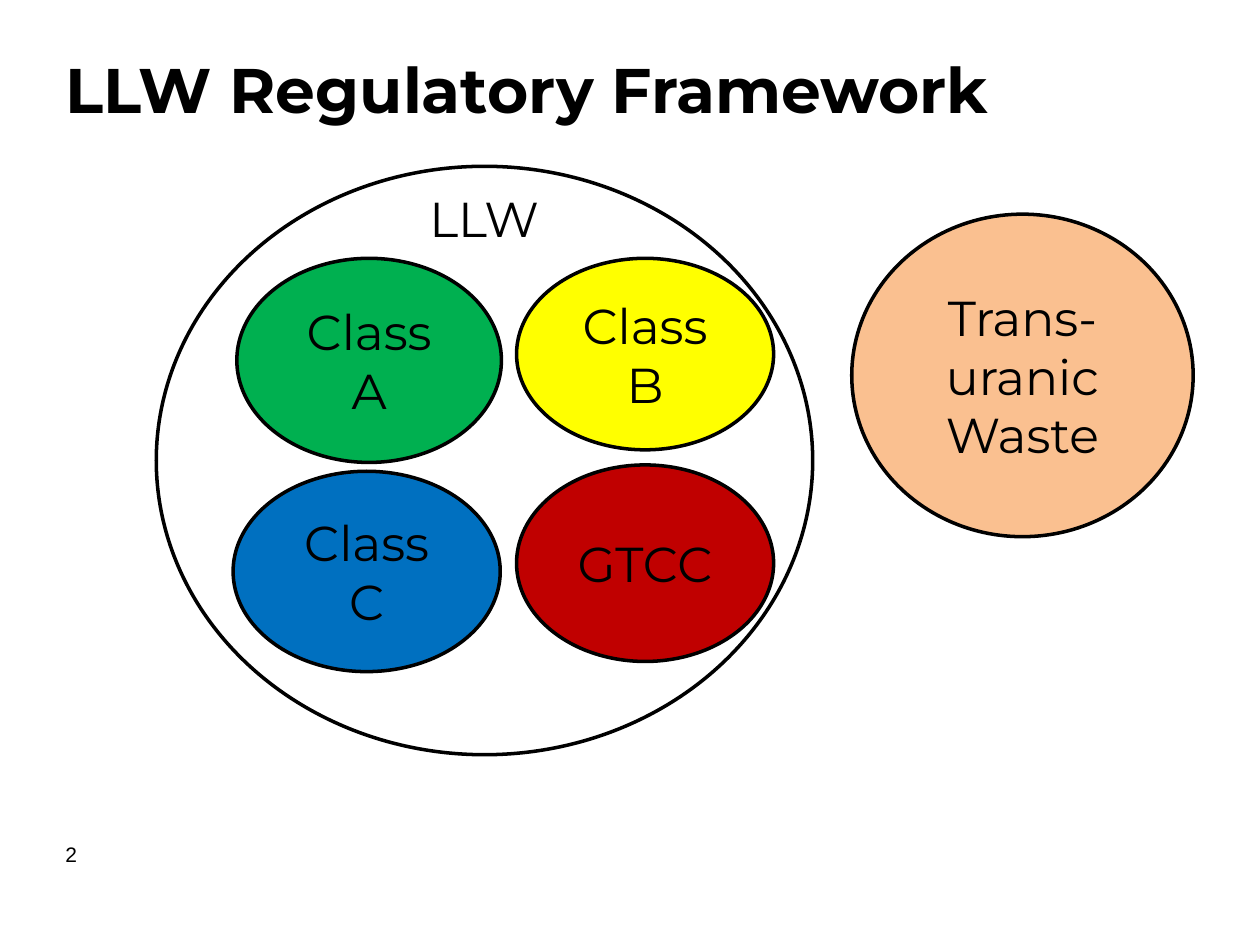
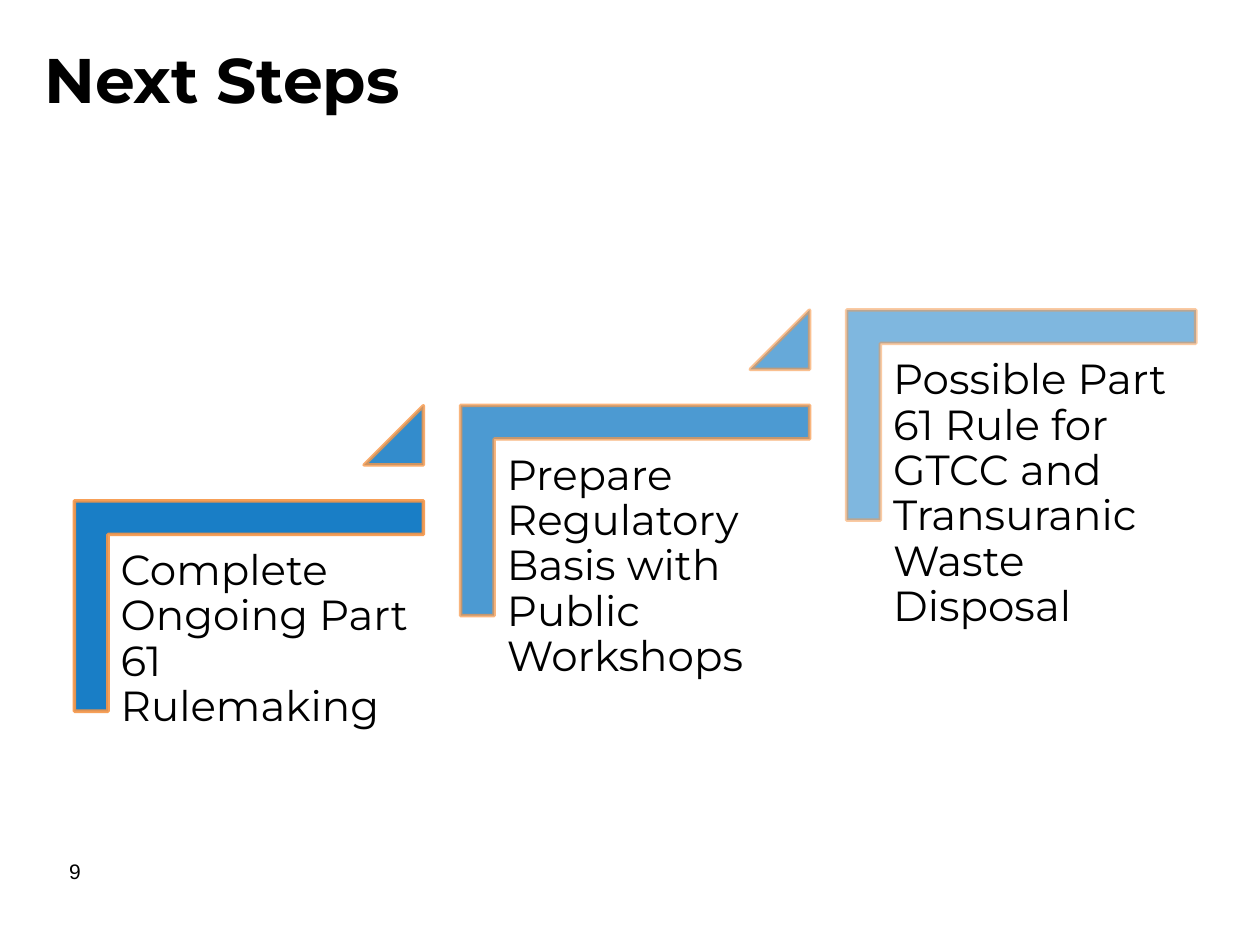
import dataclasses

import lxml.etree
import pptx
import pptx.dml.color
import pptx.enum.shapes
import pptx.enum.text
import pptx.oxml.ns
import pptx.util

RGBColor = pptx.dml.color.RGBColor
ShapeKind = pptx.enum.shapes.MSO_SHAPE
Align = pptx.enum.text.PP_ALIGN
Anchor = pptx.enum.text.MSO_ANCHOR

BLACK = RGBColor(0x00, 0x00, 0x00)
WHITE = RGBColor(0xFF, 0xFF, 0xFF)
GREEN = RGBColor(0x00, 0xB0, 0x50)
YELLOW = RGBColor(0xFF, 0xFF, 0x00)
BLUE = RGBColor(0x00, 0x70, 0xC0)
RED = RGBColor(0xC0, 0x00, 0x00)
PEACH = RGBColor(0xFA, 0xC0, 0x90)
ORANGE = RGBColor(0xF7, 0x96, 0x46)

HEADING_FONT = "Montserrat"
NUMBER_FONT = "Arial"
SLIDE_WIDTH = pptx.util.Inches(10)
SLIDE_HEIGHT = pptx.util.Inches(7.5)
COLUMNS, ROWS = 100, 75
TITLE_ONLY_LAYOUT = 5


@dataclasses.dataclass
class Box:
    left: float
    top: float
    width: float
    height: float

    def inner(self, left, top, width, height):
        return Box(self.left + left, self.top + top, width, height)

    def lengths(self):
        column, row = SLIDE_WIDTH / COLUMNS, SLIDE_HEIGHT / ROWS
        return (round(self.left * column), round(self.top * row),
                round(self.width * column), round(self.height * row))


def write(shape, text, size, font=HEADING_FONT, align=Align.LEFT,
          anchor=Anchor.MIDDLE, bold=False):
    frame = shape.text_frame
    frame.word_wrap = True
    frame.vertical_anchor = anchor
    frame.text = text
    paragraph = frame.paragraphs[0]
    paragraph.alignment = align
    paragraph.font.name = font
    paragraph.font.size = pptx.util.Pt(size)
    paragraph.font.bold = bold
    paragraph.font.color.rgb = BLACK
    return paragraph


def add_text(slide, box, text, size, **style):
    shape = slide.shapes.add_textbox(*box.lengths())
    return shape, write(shape, text, size, **style)


def add_outlined(slide, kind, box, fill, line):
    shape = slide.shapes.add_shape(kind, *box.lengths())
    shape.shadow.inherit = False
    shape.fill.solid()
    shape.fill.fore_color.rgb = fill
    shape.line.color.rgb = line
    shape.line.width = pptx.util.Pt(2)
    return shape


def set_opacity(shape, percent):
    for color in shape._element.spPr.iter(pptx.oxml.ns.qn("a:srgbClr")):
        alpha = lxml.etree.SubElement(color, pptx.oxml.ns.qn("a:alpha"))
        alpha.set("val", str(percent * 1000))


def add_titled_slide(presentation, title, title_box, number, number_box, number_align):
    slide = presentation.slides.add_slide(presentation.slide_layouts[TITLE_ONLY_LAYOUT])
    heading = slide.shapes.title
    heading.left, heading.top, heading.width, heading.height = title_box.lengths()
    write(heading, title, 36, bold=True)
    add_text(slide, number_box, number, 12, font=NUMBER_FONT, align=number_align)
    return slide


def add_waste_class(slide, box, text, fill):
    ellipse = add_outlined(slide, ShapeKind.OVAL, box, fill, BLACK)
    write(ellipse, text, 28, align=Align.CENTER)


def add_low_level_waste(slide, box):
    add_outlined(slide, ShapeKind.OVAL, box, WHITE, BLACK)
    classes = [
        ("Class B", YELLOW, (28.6, 7.3, 20.4, 15.2)),
        ("Class A", GREEN, (6.4, 7.3, 21, 16.2)),
        ("Class C", BLUE, (6.1, 24.2, 21.2, 15.9)),
        ("GTCC", RED, (28.6, 23.7, 20.4, 15.6)),
    ]
    for text, fill, place in classes:
        add_waste_class(slide, box.inner(*place), text, fill)
    add_text(slide, box.inner(20.7, 1.3, 15.2, 5.7), "LLW", 28, anchor=Anchor.TOP)


def add_step(slide, box, text, opacity, has_next):
    turn = (box.width - box.height) / 2
    upright = box.inner(turn, -turn, box.height, box.width)
    bracket = add_outlined(slide, ShapeKind.CORNER, upright, BLUE, ORANGE)
    bracket.rotation = 90
    bracket.adjustments[0] = bracket.adjustments[1] = 0.16
    set_opacity(bracket, opacity)

    label, paragraph = add_text(slide, box.inner(2.7, 2.85, 25, 21.9), text, 24,
                                anchor=Anchor.TOP)
    paragraph.line_spacing = 0.9
    frame = label.text_frame
    frame.margin_left = frame.margin_right = pptx.util.Inches(0.1)
    frame.margin_top = frame.margin_bottom = pptx.util.Inches(0.1)

    if has_next:
        rise = add_outlined(slide, ShapeKind.ISOSCELES_TRIANGLE,
                            box.inner(23, -7.55, 4.7, 4.7), BLUE, ORANGE)
        rise.adjustments[0] = 1
        set_opacity(rise, opacity - 10)


def add_staircase(slide, box, steps):
    for index, text in enumerate(steps):
        step_box = box.inner(30.65 * index, box.height - 16.7 - 7.58 * index, 27.7, 16.7)
        add_step(slide, step_box, text, 90 - 20 * index, index < len(steps) - 1)


def add_framework_slide(presentation):
    slide = add_titled_slide(presentation, "LLW Regulatory Framework",
                             Box(4.2, 1.7, 80, 10.6),
                             "2", Box(4.2, 65.8, 23.3, 4), Align.LEFT)
    add_low_level_waste(slide, Box(12.4, 13.2, 52.1, 46.7))
    add_waste_class(slide, Box(67.6, 17, 27.1, 25.6), "Trans-uranic Waste", PEACH)


def add_next_steps_slide(presentation):
    slide = add_titled_slide(presentation, "Next Steps", Box(2.5, 0, 89.2, 12.5),
                             "9", Box(0.3, 67.5, 7.1, 3.3), Align.RIGHT)
    add_staircase(slide, Box(5.9, 24.6, 89, 31.85), [
        "Complete Ongoing Part 61 Rulemaking",
        "Prepare Regulatory Basis with Public Workshops",
        "Possible Part 61 Rule for GTCC and Transuranic Waste Disposal",
    ])


def main():
    presentation = pptx.Presentation()
    presentation.slide_width = SLIDE_WIDTH
    presentation.slide_height = SLIDE_HEIGHT
    add_framework_slide(presentation)
    add_next_steps_slide(presentation)
    presentation.save("out.pptx")


if __name__ == "__main__":
    main()
